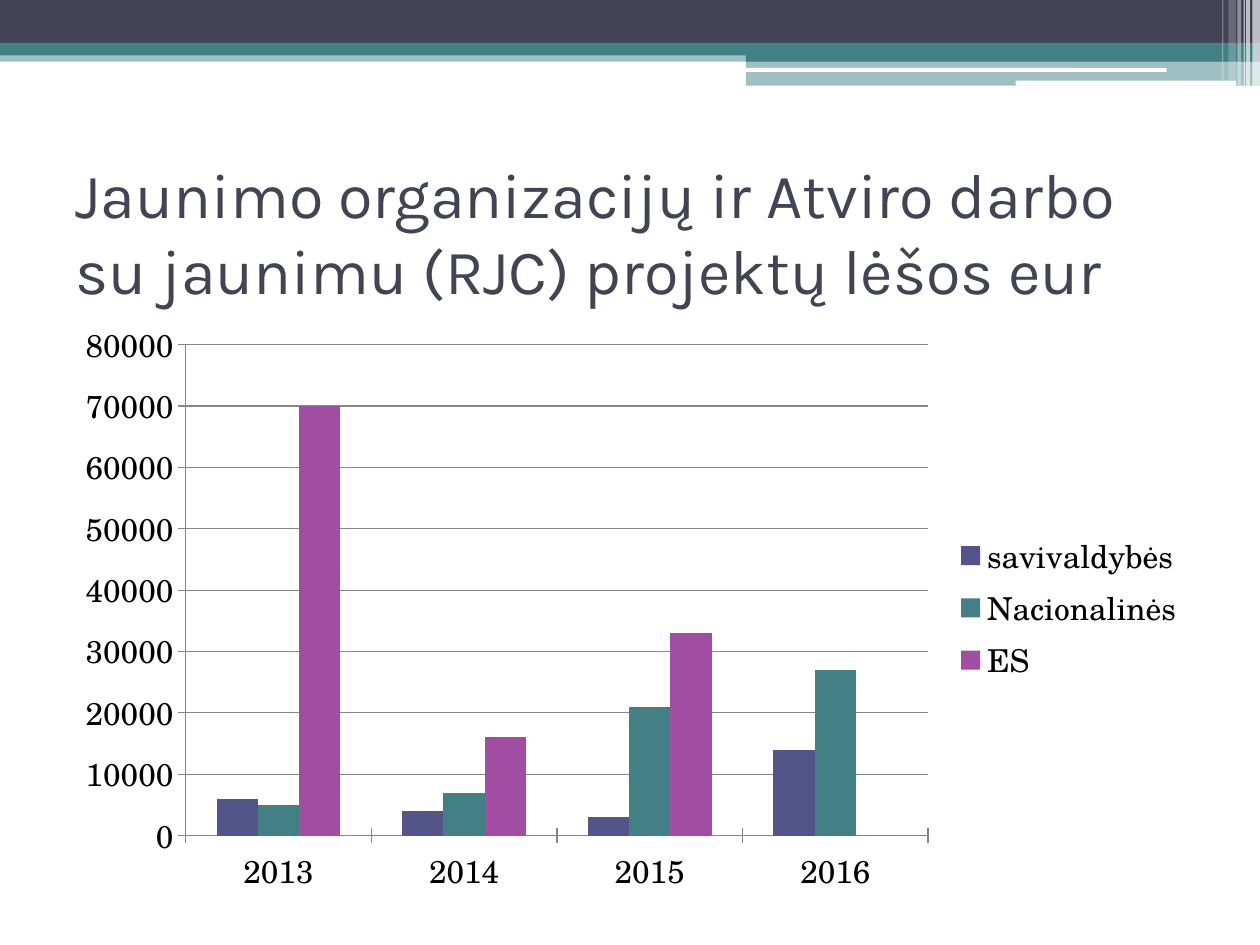
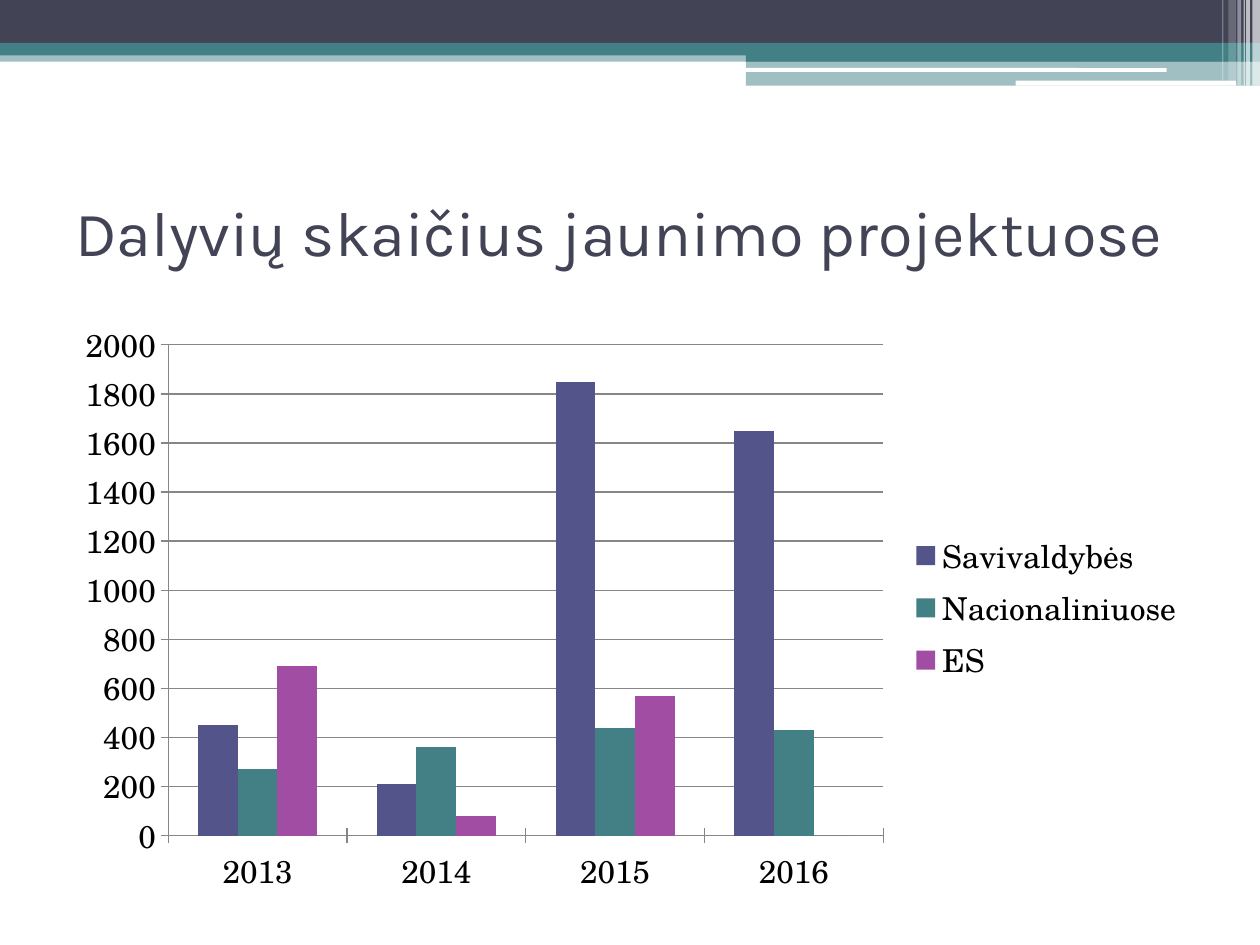
import dataclasses

import pptx
import pptx.chart.chart
import pptx.chart.data
import pptx.dml.color
import pptx.dml.fill
import pptx.enum.chart
import pptx.enum.shapes
import pptx.enum.text
import pptx.oxml.ns
import pptx.oxml.xmlchemy
import pptx.slide
import pptx.util
from pptx.util import Inches, Pt

COLOURS = {
    "slate": "424456",
    "teal": "438086",
    "white": "FFFFFF",
    "black": "000000",
    "grid": "868686",
    "indigo": "53548A",
    "purple": "A04DA3",
}
SERIES_COLOURS = ("indigo", "teal", "purple")
TITLE_FONT = "Karla"
CHART_FONT = "TeX Gyre Schola"
YEARS = ("2013", "2014", "2015", "2016")


@dataclasses.dataclass(frozen=True)
class Band:
    left: float
    top: float
    width: float
    height: float
    colour: str
    opacity: int = 100
    rounded: bool = False


@dataclasses.dataclass(frozen=True)
class ChartPage:
    title: str
    series: dict[str, tuple[int, ...]]


HEADER_BANDS = (
    Band(0, 0.4, 10, 0.09, "teal", 50),
    Band(0, 0, 10, 0.34, "slate"),
    Band(0, 0.34, 10, 0.1, "teal"),
    Band(5.92, 0.39, 4.08, 0.1, "teal"),
    Band(5.92, 0.48, 4.08, 0.2, "teal", 50),
    Band(5.91, 0.54, 3.35, 0.03, "white", rounded=True),
    Band(8.06, 0.64, 1.75, 0.04, "white", rounded=True),
)
# Pale vertical stripes at the right end: left, width, height, opacity
STRIPES = (
    (9.94, 0.06, 0.68, 65),
    (9.89, 0.03, 0.68, 65),
    (9.87, 0.01, 0.68, 60),
    (9.82, 0.03, 0.68, 40),
    (9.75, 0.06, 0.64, 20),
    (9.7, 0.01, 0.64, 30),
)
BANDS = HEADER_BANDS + tuple(
    Band(left, 0, width, height, "white", opacity)
    for left, width, height, opacity in STRIPES
)

PAGES = (
    ChartPage(
        "Jaunimo organizacijų ir Atviro darbo su jaunimu (RJC) projektų lėšos eur",
        {
            "savivaldybės": (6000, 4000, 3000, 14000),
            "Nacionalinės": (5000, 7000, 21000, 27000),
            "ES": (70000, 16000, 33000, 0),
        },
    ),
    ChartPage(
        "Dalyvių skaičius jaunimo projektuose",
        {
            "Savivaldybės": (450, 210, 1850, 1650),
            "Nacionaliniuose": (270, 360, 440, 430),
            "ES": (690, 80, 570, 0),
        },
    ),
)


def rgb(name: str) -> pptx.dml.color.RGBColor:
    return pptx.dml.color.RGBColor.from_string(COLOURS[name])


def fill_solid(fill: pptx.dml.fill.FillFormat, colour: str) -> None:
    fill.solid()
    fill.fore_color.rgb = rgb(colour)


def draw_band(page: pptx.slide.Slide, band: Band) -> None:
    kinds = pptx.enum.shapes.MSO_SHAPE
    shape = page.shapes.add_shape(
        kinds.ROUNDED_RECTANGLE if band.rounded else kinds.RECTANGLE,
        Inches(band.left), Inches(band.top), Inches(band.width), Inches(band.height),
    )
    shape.shadow.inherit = False
    shape.line.fill.background()
    fill_solid(shape.fill, band.colour)
    if band.opacity < 100:
        colour = shape.element.find(".//" + pptx.oxml.ns.qn("a:srgbClr"))
        alpha = pptx.oxml.xmlchemy.OxmlElement("a:alpha")
        alpha.set("val", str(band.opacity * 1000))
        colour.append(alpha)


def draw_title(page: pptx.slide.Slide, text: str) -> None:
    box = page.shapes.add_textbox(Inches(0.5), Inches(1.25), Inches(9), Inches(1.17))
    frame = box.text_frame
    frame.word_wrap = True
    frame.vertical_anchor = pptx.enum.text.MSO_ANCHOR.MIDDLE
    para = frame.paragraphs[0]
    para.text = text
    para.font.name = TITLE_FONT
    para.font.size = Pt(36)
    para.font.color.rgb = rgb("slate")


def style_axes(chart: pptx.chart.chart.Chart) -> None:
    for axis in (chart.category_axis, chart.value_axis):
        axis.major_tick_mark = pptx.enum.chart.XL_TICK_MARK.CROSS
        axis.minor_tick_mark = pptx.enum.chart.XL_TICK_MARK.NONE
        axis.format.line.color.rgb = rgb("grid")
    chart.value_axis.has_major_gridlines = True
    chart.value_axis.major_gridlines.format.line.color.rgb = rgb("grid")


def draw_chart(page: pptx.slide.Slide, series: dict[str, tuple[int, ...]]) -> None:
    data = pptx.chart.data.CategoryChartData()
    data.categories = YEARS
    for name, values in series.items():
        data.add_series(name, values)
    chart = page.shapes.add_chart(
        pptx.enum.chart.XL_CHART_TYPE.COLUMN_CLUSTERED,
        Inches(0.5), Inches(2.46), Inches(9), Inches(4.73), data,
    ).chart
    chart.has_title = False
    chart.font.name = CHART_FONT
    chart.font.size = Pt(18)
    chart.font.color.rgb = rgb("black")
    chart.has_legend = True
    chart.legend.position = pptx.enum.chart.XL_LEGEND_POSITION.RIGHT
    chart.legend.include_in_layout = False
    style_axes(chart)
    plot = chart.plots[0]
    plot.vary_by_categories = False
    plot.gap_width = 150
    plot.overlap = 0
    for columns, colour in zip(plot.series, SERIES_COLOURS):
        fill_solid(columns.format.fill, colour)


def main() -> None:
    deck = pptx.Presentation()
    deck.slide_width, deck.slide_height = Inches(10), Inches(7.5)
    for content in PAGES:
        page = deck.slides.add_slide(deck.slide_layouts[6])
        for band in BANDS:
            draw_band(page, band)
        draw_title(page, content.title)
        draw_chart(page, content.series)
    deck.save("out.pptx")


if __name__ == "__main__":
    main()
